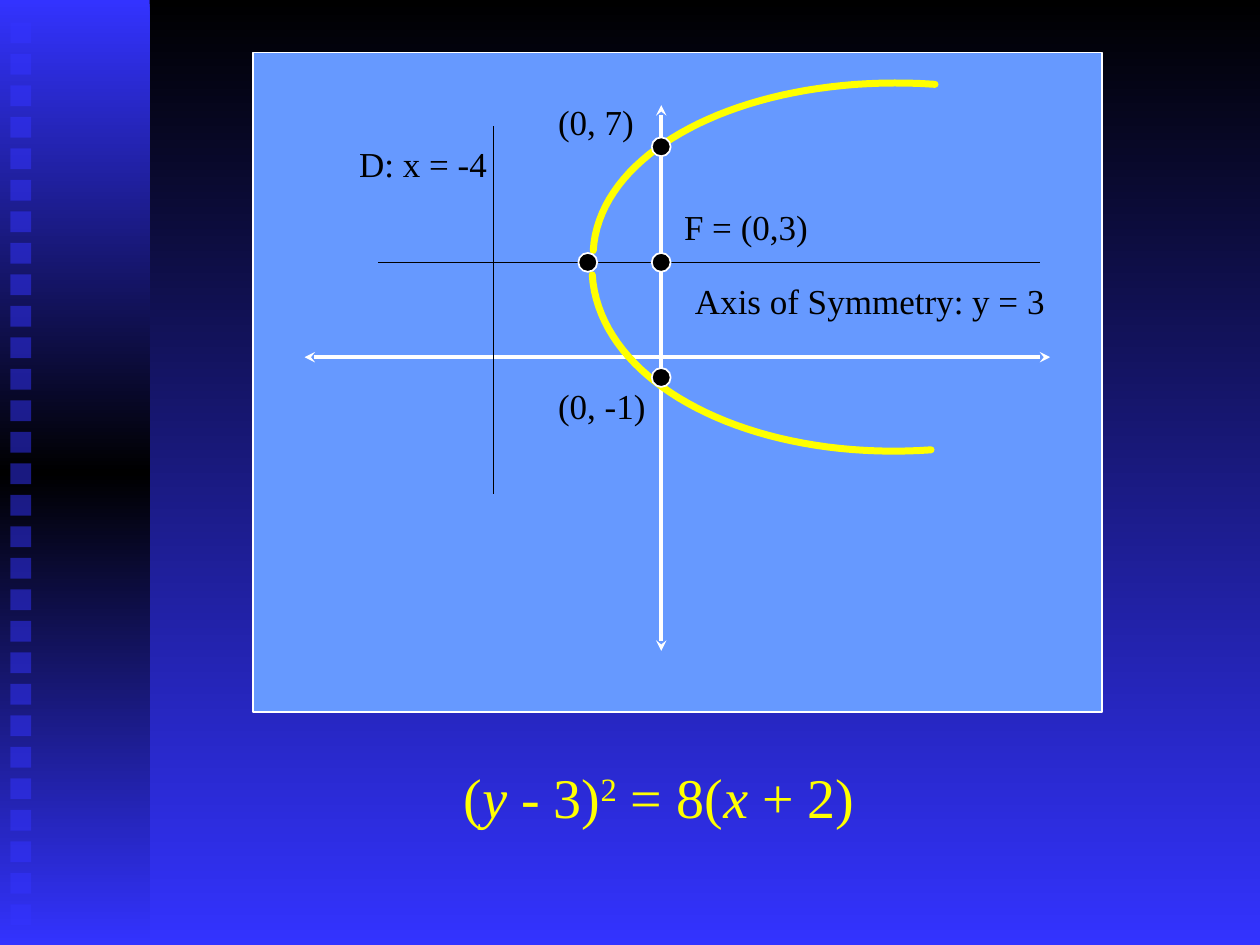
from copy import deepcopy
from dataclasses import dataclass

from lxml.etree import SubElement
from pptx import Presentation
from pptx.dml.color import RGBColor
from pptx.enum.shapes import MSO_CONNECTOR, MSO_SHAPE
from pptx.enum.text import MSO_AUTO_SIZE
from pptx.oxml.ns import qn
from pptx.util import Cm, Pt

BLACK, WHITE, BLUE, YELLOW = "000000", "FFFFFF", "3333FF", "FFFF00"
PANEL_BLUE = "6699FF"
SLIDE_WIDTH, SLIDE_HEIGHT = 25.4, 19.05
ORIGIN_X, ORIGIN_Y, SYMMETRY_Y = 13.33, 7.2, 5.29
DIRECTRIX_X, VERTEX_X = 9.95, 11.85
POINT_DIAMETER = 0.38
SQUARE_COUNT, SQUARE_SIZE, SQUARE_PITCH = 29, 0.42, 0.635
CURVE_STEPS = 40

Point = tuple[float, float]


@dataclass
class Segment:
    start: Point
    end: Point
    color: str
    width: float
    arrows: bool = False


@dataclass
class Label:
    left: float
    top: float
    width: float
    height: float
    runs: list[tuple[str, dict]]
    size: int = 20
    color: str = BLACK


SEGMENTS = [
    Segment((ORIGIN_X, 2.12), (ORIGIN_X, 13.12), WHITE, 2, True),
    Segment((6.14, ORIGIN_Y), (21.17, ORIGIN_Y), WHITE, 2, True),
    Segment((7.62, SYMMETRY_Y), (20.96, SYMMETRY_Y), BLACK, 1),
    Segment((DIRECTRIX_X, 2.54), (DIRECTRIX_X, 9.95), BLACK, 1),
]
PARABOLA_ARMS = [
    [(18.77, 9.07), (15.14, 9.32), (12.09, 7.75), (11.94, 5.54)],
    [(11.96, 5.05), (12.09, 2.95), (15.19, 1.45), (18.85, 1.7)],
]
POINTS = [(ORIGIN_X, SYMMETRY_Y), (VERTEX_X, SYMMETRY_Y), (ORIGIN_X, 7.61), (ORIGIN_X, 2.96)]
ITALIC = {"italic": True}
LABELS = [
    Label(6.99, 2.74, 3.6, 1.09, [("D: x = -4", {})]),
    Label(13.54, 4.01, 5.92, 1.09, [("F = (0,3)", {})]),
    Label(13.76, 5.51, 8.46, 1.09, [("Axis of Symmetry: y = 3", {})]),
    Label(11.0, 7.62, 2.97, 1.09, [("(0, -1)", {})]),
    Label(11.0, 1.9, 3.81, 1.09, [("(0, 7)", {})]),
    Label(9.1, 15.24, 11.86, 1.6,
          [("(", {}), ("y", ITALIC), (" - 3)", {}), ("2", {"baseline": "30000"}),
           (" = 8(", {}), ("x", ITALIC), (" + 2)", {})], 32, YELLOW),
]


def rgb(color: str) -> RGBColor:
    return RGBColor.from_string(color)


def set_line(line, color: str, width: float) -> None:
    line.color.rgb = rgb(color)
    line.width = Pt(width)


def set_vertical_gradient(fill, first: str, last: str) -> None:
    fill.gradient()
    fill.gradient_angle = 270
    for stop, color, position in zip(fill.gradient_stops, (first, last), (0, 1)):
        stop.color.rgb = rgb(color)
        stop.position = position


def add_filled(slide, preset, left: float, top: float, width: float, height: float, color: str):
    shape = slide.shapes.add_shape(preset, Cm(left), Cm(top), Cm(width), Cm(height))
    shape.shadow.inherit = False
    shape.fill.solid()
    shape.fill.fore_color.rgb = rgb(color)
    shape.line.fill.background()
    return shape


def add_sidebar(slide) -> None:
    bar = add_filled(slide, MSO_SHAPE.RECTANGLE, 0, 0, 3.02, SLIDE_HEIGHT, BLACK)
    set_vertical_gradient(bar.fill, BLUE, BLACK)
    stops = bar._element.spPr.find(f".//{qn('a:gsLst')}")
    stops.append(deepcopy(stops[0]))
    for stop, position in zip(stops, ("0", "50000", "100000")):
        stop.set("pos", position)
    for index in range(SQUARE_COUNT):
        square = add_filled(slide, MSO_SHAPE.RECTANGLE, 0.21, 0.45 + index * SQUARE_PITCH,
                            SQUARE_SIZE, SQUARE_SIZE, BLUE)
        color = square._element.spPr.find(f".//{qn('a:srgbClr')}")
        SubElement(color, qn("a:alpha"), val="50000")


def add_segment(slide, segment: Segment) -> None:
    ends = [Cm(value) for value in (*segment.start, *segment.end)]
    connector = slide.shapes.add_connector(MSO_CONNECTOR.STRAIGHT, *ends)
    set_line(connector.line, segment.color, segment.width)
    if segment.arrows:
        for tag in ("a:headEnd", "a:tailEnd"):
            SubElement(connector.line._get_or_add_ln(), qn(tag), type="stealth")
    SubElement(connector._element.spPr, qn("a:effectLst"))


def bezier_point(controls: list[Point], t: float) -> Point:
    weights = ((1 - t) ** 3, 3 * t * (1 - t) ** 2, 3 * t ** 2 * (1 - t), t ** 3)
    x, y = (sum(w * c for w, c in zip(weights, axis)) for axis in zip(*controls))
    return Cm(x), Cm(y)


def add_curve(slide, controls: list[Point]) -> None:
    start, *rest = [bezier_point(controls, i / CURVE_STEPS) for i in range(CURVE_STEPS + 1)]
    builder = slide.shapes.build_freeform(*start)
    builder.add_line_segments(rest, close=False)
    curve = builder.convert_to_shape()
    curve.shadow.inherit = False
    curve.fill.background()
    set_line(curve.line, YELLOW, 4)
    curve.line._get_or_add_ln().set("cap", "rnd")


def add_point(slide, center: Point) -> None:
    left, top = (value - POINT_DIAMETER / 2 for value in center)
    dot = add_filled(slide, MSO_SHAPE.OVAL, left, top, POINT_DIAMETER, POINT_DIAMETER, BLACK)
    set_line(dot.line, WHITE, 1)


def add_label(slide, label: Label) -> None:
    box = slide.shapes.add_textbox(Cm(label.left), Cm(label.top), Cm(label.width), Cm(label.height))
    frame = box.text_frame
    frame.word_wrap = True
    frame.auto_size = MSO_AUTO_SIZE.SHAPE_TO_FIT_TEXT
    paragraph = frame.paragraphs[0]
    spacing = SubElement(paragraph._p.get_or_add_pPr(), qn("a:spcBef"))
    SubElement(spacing, qn("a:spcPct"), val="50000")
    for text, extra in label.runs:
        run = paragraph.add_run()
        run.text = text
        run.font.color.rgb = rgb(label.color)
        formats = {"name": "Times New Roman", "size": Pt(label.size), **extra}
        for name, value in formats.items():
            if name == "baseline":
                run._r.get_or_add_rPr().set(name, value)
            else:
                setattr(run.font, name, value)


def main() -> None:
    presentation = Presentation()
    presentation.slide_width, presentation.slide_height = Cm(SLIDE_WIDTH), Cm(SLIDE_HEIGHT)
    slide = presentation.slides.add_slide(presentation.slide_layouts[6])
    set_vertical_gradient(slide.background.fill, BLACK, BLUE)
    add_sidebar(slide)
    panel = add_filled(slide, MSO_SHAPE.RECTANGLE, 5.1, 1.06, 17.12, 13.3, PANEL_BLUE)
    set_line(panel.line, WHITE, 1)
    for draw, items in ((add_segment, SEGMENTS), (add_curve, PARABOLA_ARMS),
                        (add_point, POINTS), (add_label, LABELS)):
        for item in items:
            draw(slide, item)
    presentation.save("out.pptx")


if __name__ == "__main__":
    main()
